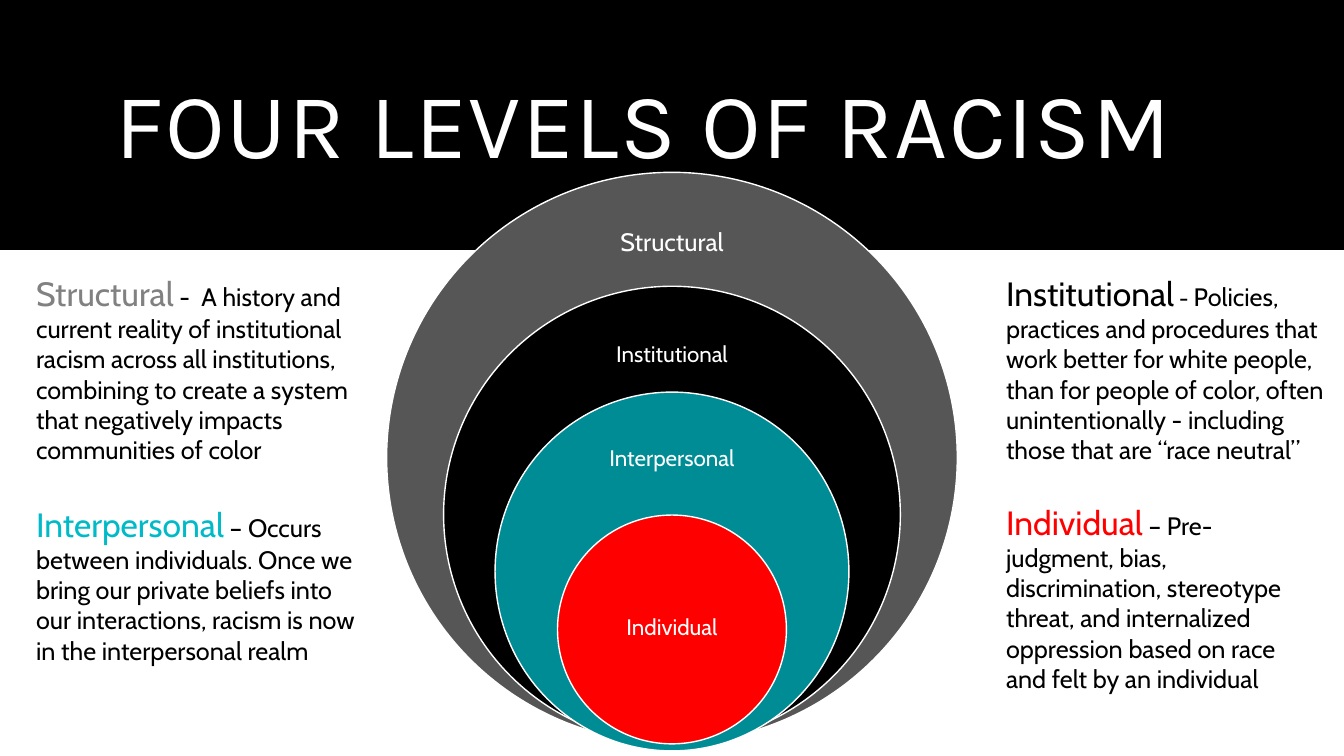
"""Build a slide on the four levels of racism: nested circles and definitions."""
from pptx import Presentation
from pptx.dml.color import RGBColor
from pptx.enum.shapes import MSO_SHAPE
from pptx.enum.text import MSO_ANCHOR, MSO_AUTO_SIZE, PP_ALIGN
from pptx.util import Inches, Pt


class Theme:
    head, body = "Karla", "Cabin"
    white, black, gray = "FFFFFF", "000000", "565656"
    teal, red = "008C95", "FF0000"
    silver, aqua = "818181", "00BAC7"
    title, term, text, label, dash = 66, 24, 18, 16, 16


def add_form(kind, box, fill, line=None):
    form = slide.shapes.add_shape(kind, *map(Inches, box))
    form.shadow.inherit = False
    form.fill.solid()
    form.fill.fore_color.rgb = RGBColor.from_string(fill)
    if line:
        form.line.color.rgb = RGBColor.from_string(line)
        form.line.width = Pt(1)
    else:
        form.line.fill.background()


def add_text(box, runs, font=Theme.body):
    area = slide.shapes.add_textbox(*map(Inches, box))
    frame = area.text_frame
    frame.word_wrap = True
    for words, size, color in runs:
        run = frame.paragraphs[0].add_run()
        run.text = words
        run.font.name = font
        run.font.size = Pt(size)
        run.font.color.rgb = RGBColor.from_string(color)
    return frame


deck = Presentation()
deck.slide_width, deck.slide_height = Inches(13.33), Inches(7.5)
slide = deck.slides.add_slide(deck.slide_layouts[6])

add_form(MSO_SHAPE.RECTANGLE, (0, 0, 13.33, 2.48), Theme.black)
title = add_text((1.05, 0.35, 11.23, 1.86),
                 [("FOUR LEVELS OF RACISM", Theme.title, Theme.white)], Theme.head)
title.vertical_anchor = MSO_ANCHOR.MIDDLE
title.paragraphs[0].line_spacing = 0.9
title.paragraphs[0].runs[0].font._element.set("spc", "120")

middle = 6.665
rings = [
    ("Structural", Theme.gray, 1.71, 5.66, 5.66, (1.99, 0.85), Theme.text, 0.14),
    ("Institutional", Theme.black, 2.84, 4.53, 4.53, (3.11, 0.82), Theme.label, 0.12),
    ("Interpersonal", Theme.teal, 3.89, 3.51, 3.56, (4.16, 0.8), Theme.label, 0.12),
    ("Individual", Theme.red, 5.11, 2.27, 2.27, (5.67, 1.13), Theme.label, 0.12),
]
for name, fill, top, width, height, (text_top, text_height), size, inset in rings:
    add_form(MSO_SHAPE.OVAL, (middle - width / 2, top, width, height), fill, Theme.white)
    label = add_text((middle - 0.8, text_top, 1.6, text_height),
                     [(name, size, Theme.white)])
    label.vertical_anchor = MSO_ANCHOR.MIDDLE
    label.margin_left = label.margin_right = Inches(inset)
    label.margin_top = label.margin_bottom = Inches(inset)
    label.paragraphs[0].alignment = PP_ALIGN.CENTER
    label.paragraphs[0].line_spacing = 0.9

left, right = 0.26, 9.88
notes = [
    (left, 2.66, 3.46, "Structural", Theme.silver, " -  ", Theme.text,
     "A history and current reality of institutional racism across all institutions, "
     "combining to create a system that negatively impacts communities of color"),
    (right, 2.66, 3.46, "Institutional", Theme.black, " - ", Theme.dash,
     "Policies, practices and procedures that work better for white people, than for "
     "people of color, often unintentionally - including those that are “race neutral”"),
    (left, 4.95, 3.46, "Interpersonal", Theme.aqua, " – ", Theme.text,
     "Occurs between individuals. Once we bring our private beliefs into our "
     "interactions, racism is now in the interpersonal realm"),
    (right, 4.93, 3.01, "Individual", Theme.red, " – ", Theme.text,
     "Pre-judgment, bias, discrimination, stereotype threat, and internalized "
     "oppression based on race and felt by an individual"),
]
for x, y, width, term, color, dash, size, words in notes:
    note = add_text((x, y, width, 2.02), [
        (term, Theme.term, color),
        (dash, size, Theme.black),
        (words, Theme.text, Theme.black),
    ])
    note.auto_size = MSO_AUTO_SIZE.SHAPE_TO_FIT_TEXT

deck.save("out.pptx")
